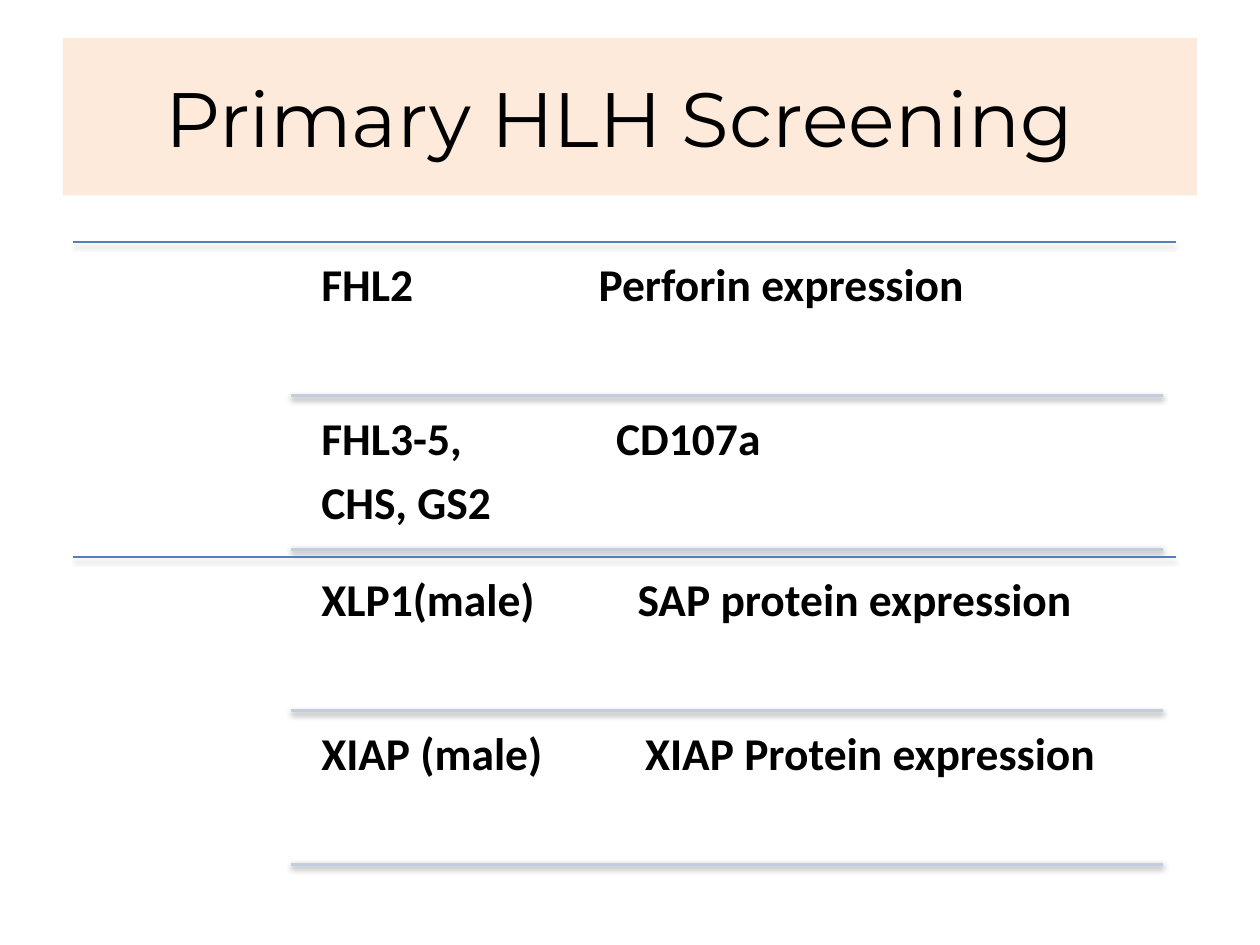
"""Build the Primary HLH Screening slide."""
import pptx
import pptx.dml.color
import pptx.enum.shapes
import pptx.enum.text
import pptx.oxml
import pptx.oxml.ns
import pptx.util
from pptx.util import Inches

COLORS = {
    "text": "000000",
    "banner": "FDEADA",
    "section": "4F81BD",
    "divider": "C2CDE1",
    "shadow": "000000",
}
NAMESPACE = pptx.oxml.ns.nsdecls("a")


def add_text(shape, lines, font="Calibri", size=26, bold=False, inset=0.1,
             align=pptx.enum.text.PP_ALIGN.LEFT, anchor=pptx.enum.text.MSO_ANCHOR.TOP,
             tab=None, line_spacing=None, space_after=0):
    frame = shape.text_frame
    frame.word_wrap = True
    frame.vertical_anchor = anchor
    frame.margin_left = frame.margin_right = Inches(inset)
    frame.margin_top = frame.margin_bottom = Inches(inset)
    for index, line in enumerate(lines):
        paragraph = frame.add_paragraph() if index else frame.paragraphs[0]
        if tab:
            paragraph._p.get_or_add_pPr().append(pptx.oxml.parse_xml(
                f'<a:tabLst {NAMESPACE}><a:tab pos="{Inches(tab)}" algn="l"/></a:tabLst>'))
        paragraph.alignment = align
        paragraph.line_spacing = line_spacing
        paragraph.space_after = pptx.util.Pt(space_after)
        run = paragraph.add_run()
        run.text = line
        run.font.name = font
        run.font.size = pptx.util.Pt(size)
        run.font.bold = bold
        run.font.color.rgb = pptx.dml.color.RGBColor.from_string(COLORS["text"])


def add_line(left, right, top, color, width, opacity, distance):
    connector = slide.shapes.add_connector(
        pptx.enum.shapes.MSO_CONNECTOR.STRAIGHT,
        Inches(left), Inches(top), Inches(right), Inches(top))
    connector.line.color.rgb = pptx.dml.color.RGBColor.from_string(COLORS[color])
    connector.line.width = pptx.util.Pt(width)
    connector._element.spPr.append(pptx.oxml.parse_xml(
        f'<a:effectLst {NAMESPACE}><a:outerShdw blurRad="{pptx.util.Pt(3.1)}" '
        f'dist="{pptx.util.Pt(distance)}" dir="5400000" rotWithShape="0">'
        f'<a:srgbClr val="{COLORS["shadow"]}"><a:alpha val="{opacity * 1000}"/>'
        '</a:srgbClr></a:outerShdw></a:effectLst>'))


presentation = pptx.Presentation()
presentation.slide_width = Inches(10)
presentation.slide_height = Inches(7.5)
slide = presentation.slides.add_slide(presentation.slide_layouts[6])

sections = [
    [(["FHL2\tPerforin expression"], 2.2),
     (["FHL3-5,\tCD107a", "CHS, GS2"], 2.34)],
    [(["XLP1(male)\tSAP protein expression"], 2.51),
     (["XIAP (male)\tXIAP Protein expression"], 2.57)],
]
for section_index, rows in enumerate(sections):
    section_top = 1.92 + 2.5 * section_index
    add_line(0.58, 9.33, section_top, "section", 0.75, 35, 1.8)
    for row_index, (lines, tab) in enumerate(rows):
        row_top = section_top + 0.05 + 1.22 * row_index
        text_box = slide.shapes.add_textbox(
            Inches(2.44), Inches(row_top), Inches(6.88), Inches(1.16))
        add_text(text_box, lines, bold=True, inset=0.11, tab=tab,
                 line_spacing=0.9, space_after=9)
        add_line(2.31, 9.23, row_top + 1.17, "divider", 2, 38, 1.6)

banner = slide.shapes.add_shape(
    pptx.enum.shapes.MSO_SHAPE.RECTANGLE,
    Inches(0.5), Inches(0.3), Inches(9), Inches(1.25))
banner.shadow.inherit = False
banner.fill.solid()
banner.fill.fore_color.rgb = pptx.dml.color.RGBColor.from_string(COLORS["banner"])
banner.line.fill.background()
add_text(banner, ["Primary HLH Screening "], font="Montserrat", size=44,
         align=pptx.enum.text.PP_ALIGN.CENTER, anchor=pptx.enum.text.MSO_ANCHOR.MIDDLE)

presentation.save("out.pptx")
